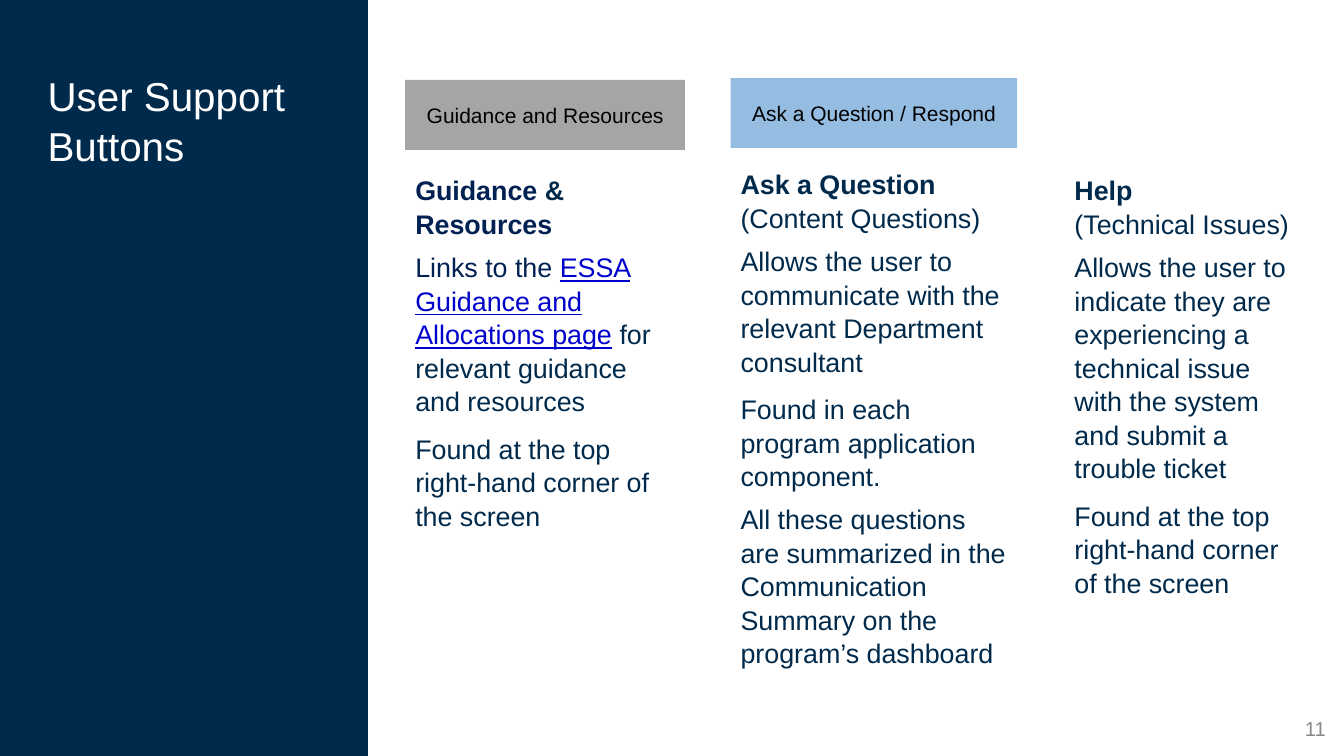
from pptx import Presentation
from pptx.dml.color import RGBColor
from pptx.enum.shapes import MSO_SHAPE as Shape
from pptx.enum.text import MSO_ANCHOR as Anchor, MSO_AUTO_SIZE as AutoSize, PP_ALIGN as Align
from pptx.oxml.ns import qn
from pptx.util import Cm, Pt
from lxml.etree import SubElement

NAVY, INDIGO, LINK = "002A4B", "002152", "0000CC"
WHITE, BLACK, GRAY = "FFFFFF", "000000", "888888"
TITLE = "User Support Buttons"
PAGE_NUMBER = "11"
TIGHT, LOOSE = 5.8, 8.3
LINE_SPACING = 1.04
BODY_HEIGHT = 11.3
BUTTON_HEIGHT = 1.47
COLUMNS = [
    {
        "left": 8.51, "top": 3.53, "width": 5.87,
        "button": ("Guidance and Resources", 1.68, "A5A5A5"),
        "paragraphs": [
            (TIGHT, [("Guidance ", INDIGO, "bold"), ("&", NAVY, "bold"),
                     (" Resources", INDIGO, "bold")]),
            (TIGHT, [("Links to the ", INDIGO, ""),
                     ("ESSA Guidance and Allocations page", LINK, "underline"),
                     (" for relevant guidance and resources", NAVY, "")]),
            (LOOSE, [("Found at the top right-hand corner of the screen", NAVY, "")]),
        ],
    },
    {
        "left": 15.34, "top": 3.4, "width": 6.02,
        "button": ("Ask a Question / Respond", 1.64, "95BDE2"),
        "paragraphs": [
            (TIGHT, [("Ask a Question ", NAVY, "bold"), ("(Content Questions)", NAVY, "")]),
            (TIGHT, [("Allows the user to communicate with the relevant "
                      "Department consultant", NAVY, "")]),
            (LOOSE, [("Found in each program application component.", NAVY, "")]),
            (TIGHT, [("All these questions are summarized in the Communication "
                      "Summary on the program’s dashboard", NAVY, "")]),
        ],
    },
    {
        "left": 22.35, "top": 3.53, "width": 5.16,
        "button": None,
        "paragraphs": [
            (TIGHT, [("Help \n", NAVY, "bold"), ("(Technical Issues)", NAVY, "")]),
            (TIGHT, [("Allows the user to indicate they are experiencing a technical "
                      "issue with the system and submit a trouble ticket", NAVY, "")]),
            (LOOSE, [("Found at the top right-hand corner of the screen", NAVY, "")]),
        ],
    },
]


def color(code):
    return RGBColor.from_string(code)


def place(shape, left, top, width, height):
    shape.left, shape.top, shape.width, shape.height = map(Cm, (left, top, width, height))


def style(span, size, code, emphasis=""):
    span.font.name = "Arial"
    span.font.size = Pt(size)
    span.font.color.rgb = color(code)
    span.font.bold = emphasis == "bold"
    span.font.underline = emphasis == "underline"


def set_frame(frame, anchor, side, edge):
    frame.word_wrap = True
    frame.auto_size = AutoSize.NONE
    frame.vertical_anchor = anchor
    frame.margin_left = frame.margin_right = Cm(side)
    frame.margin_top = frame.margin_bottom = Cm(edge)


def write_line(shape, text, size, code, align, anchor, margin):
    frame = shape.text_frame
    frame.text = text
    set_frame(frame, anchor, margin, margin)
    para = frame.paragraphs[0]
    para.alignment = align
    style(para.runs[0], size, code)


def add_block(page, left, top, width, height, fill):
    block = page.shapes.add_shape(Shape.RECTANGLE, *map(Cm, (left, top, width, height)))
    block.shadow.inherit = False
    block.fill.solid()
    block.fill.fore_color.rgb = color(fill)
    block.line.fill.background()
    return block


def write_body(body, paragraphs):
    frame = body.text_frame
    set_frame(frame, Anchor.TOP, 0.21, 0.1)
    for index, (space, spans) in enumerate(paragraphs):
        para = frame.add_paragraph() if index else frame.paragraphs[0]
        para.alignment = Align.LEFT
        para.space_before = Pt(space)
        para.space_after = Pt(0)
        para.line_spacing = LINE_SPACING
        properties = para._p.get_or_add_pPr()
        properties.set("marL", "0")
        properties.set("indent", "0")
        SubElement(properties, qn("a:buNone"))
        for text, code, emphasis in spans:
            span = para.add_run()
            span.text = text.rstrip("\n")
            style(span, 16, code, emphasis)
            if text.endswith("\n"):
                para.add_line_break()


def main():
    deck = Presentation()
    deck.slide_width, deck.slide_height = Cm(28.22), Cm(15.88)
    page = deck.slides.add_slide(deck.slide_layouts.get_by_name("Comparison"))
    page.background.fill.solid()
    page.background.fill.fore_color.rgb = color(NAVY)

    panel = add_block(page, 7.76, 0, 20.46, 15.88, WHITE)
    panel.line.color.rgb = color(WHITE)
    panel.line.width = Pt(2)
    panel.element.getparent().insert(2, panel.element)

    title = page.shapes.title
    place(title, 0.72, 1.17, 6.48, 13.54)
    write_line(title, TITLE, 24, WHITE, Align.LEFT, Anchor.TOP, 0.28)
    title.text_frame.paragraphs[0].line_spacing = LINE_SPACING

    bodies = [holder for holder in page.placeholders if holder.placeholder_format.idx > 0]
    for column, body in zip(COLUMNS, bodies):
        left, width = column["left"], column["width"]
        place(body, left, column["top"], width, BODY_HEIGHT)
        write_body(body, column["paragraphs"])
        if column["button"]:
            label, top, fill = column["button"]
            button = add_block(page, left, top, width, BUTTON_HEIGHT, fill)
            write_line(button, label, 12.5, BLACK, Align.CENTER, Anchor.MIDDLE, 0.21)
    for spare in bodies[len(COLUMNS):]:
        spare.element.getparent().remove(spare.element)

    number = page.shapes.add_textbox(*map(Cm, (26.42, 14.73, 1.7, 1.15)))
    write_line(number, PAGE_NUMBER, 12, GRAY, Align.RIGHT, Anchor.MIDDLE, 0.28)
    deck.save("out.pptx")


if __name__ == "__main__":
    main()
